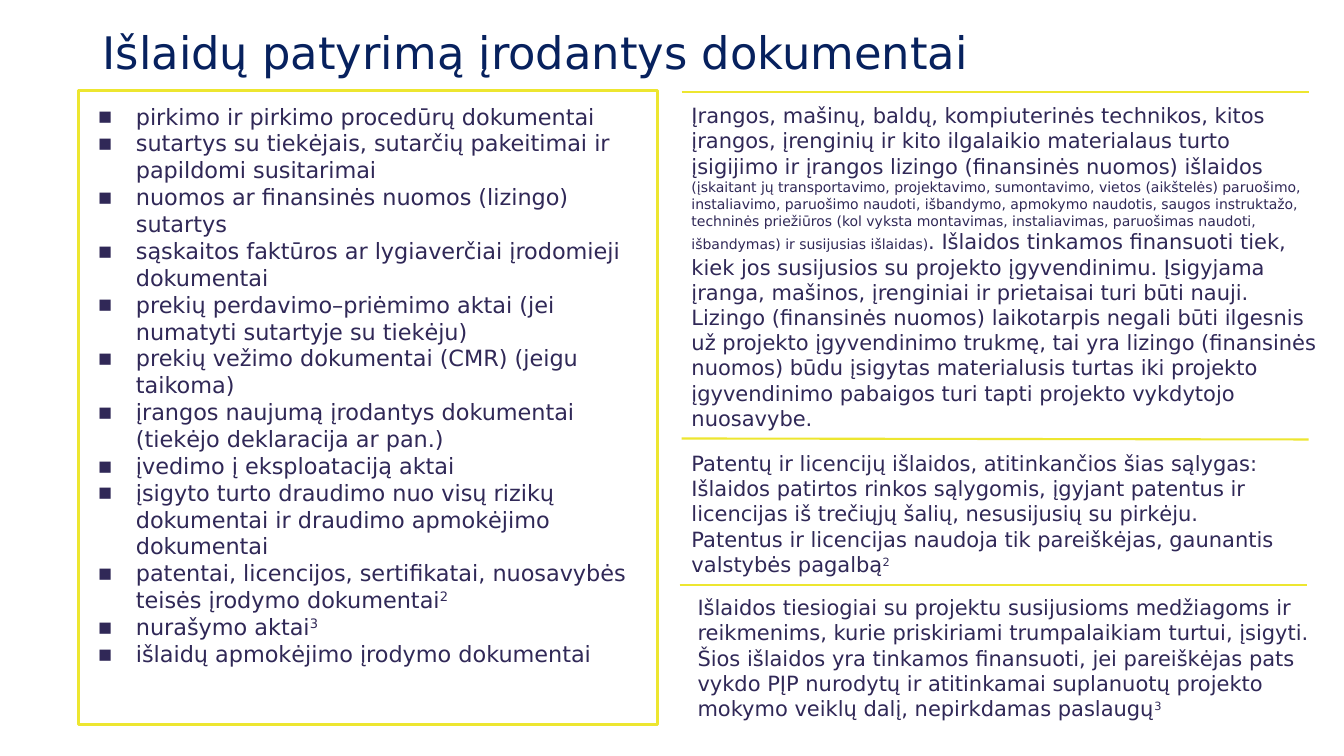
from pptx import Presentation
from pptx.dml.color import RGBColor
from pptx.enum.shapes import MSO_CONNECTOR as Link, MSO_SHAPE as Form
from pptx.enum.text import MSO_AUTO_SIZE as Fit
from pptx.oxml.ns import qn
from pptx.util import Emu, Pt
from lxml.etree import SubElement as Sub

NAVY = RGBColor(0x07, 0x21, 0x5E)
INK = RGBColor(0x30, 0x28, 0x57)
YELLOW = RGBColor(0xED, 0xE6, 0x30)

PROOFS = [
    "pirkimo ir pirkimo procedūrų dokumentai",
    "sutartys su tiekėjais, sutarčių pakeitimai ir papildomi susitarimai",
    "nuomos ar finansinės nuomos (lizingo) sutartys",
    "sąskaitos faktūros ar lygiaverčiai įrodomieji dokumentai",
    "prekių perdavimo–priėmimo aktai (jei numatyti sutartyje su tiekėju)",
    "prekių vežimo dokumentai (CMR) (jeigu taikoma)",
    "įrangos naujumą įrodantys dokumentai (tiekėjo deklaracija ar pan.)",
    "įvedimo į eksploataciją aktai",
    "įsigyto turto draudimo nuo visų rizikų dokumentai ir draudimo apmokėjimo dokumentai",
    ["patentai, licencijos, sertifikatai, nuosavybės teisės įrodymo dokumentai", ("2", 16, True)],
    ["nurašymo aktai", ("3", 16, True)],
    "išlaidų apmokėjimo įrodymo dokumentai",
]
GEAR = [[
    "Įrangos, mašinų, baldų, kompiuterinės technikos, kitos įrangos, įrenginių ir kito "
    "ilgalaikio materialaus turto įsigijimo ir įrangos lizingo (finansinės nuomos) išlaidos ",
    ("(įskaitant jų transportavimo, projektavimo, sumontavimo, vietos (aikštelės) paruošimo, "
     "instaliavimo, paruošimo naudoti, išbandymo, apmokymo naudotis, saugos instruktažo, "
     "techninės priežiūros (kol vyksta montavimas, instaliavimas, paruošimas naudoti, "
     "išbandymas) ir susijusias išlaidas)", 10, False),
    ". Išlaidos tinkamos finansuoti tiek, kiek jos susijusios su projekto įgyvendinimu. "
    "Įsigyjama įranga, mašinos, įrenginiai ir prietaisai turi būti nauji. Lizingo (finansinės "
    "nuomos) laikotarpis negali būti ilgesnis už projekto įgyvendinimo trukmę, tai yra lizingo "
    "(finansinės nuomos) būdu įsigytas materialusis turtas iki projekto įgyvendinimo pabaigos "
    "turi tapti projekto vykdytojo nuosavybe.",
]]
PATENTS = [
    "Patentų ir licencijų išlaidos, atitinkančios šias sąlygas:",
    "Išlaidos patirtos rinkos sąlygomis, įgyjant patentus ir licencijas iš trečiųjų šalių, "
    "nesusijusių su pirkėju.",
    ["Patentus ir licencijas naudoja tik pareiškėjas, gaunantis valstybės pagalbą", ("2", 14, True)],
]
GOODS = [[
    "Išlaidos tiesiogiai su projektu susijusioms medžiagoms ir reikmenims, kurie priskiriami "
    "trumpalaikiam turtui, įsigyti. Šios išlaidos yra tinkamos finansuoti, jei pareiškėjas pats "
    "vykdo PĮP nurodytų ir atitinkamai suplanuotų projekto mokymo veiklų dalį, nepirkdamas "
    "paslaugų", ("3", 14, True),
]]


def px(n):
    """Turn px, a hundred to the inch, into EMU."""
    return Emu(n * 9144)


class Page:
    """Holds the font and the slide, and draws each kind of element."""

    def __init__(self, slide, face):
        self.shapes = slide.shapes
        self.face = face

    def text(self, box, paras, size, ink=INK, mark=None):
        """Add a text box; a paragraph is a string or a list of parts."""
        frame = self.shapes.add_textbox(*map(px, box)).text_frame
        frame.word_wrap = True
        frame.auto_size = Fit.SHAPE_TO_FIT_TEXT
        for i, parts in enumerate(paras):
            para = frame.add_paragraph() if i else frame.paragraphs[0]
            if mark:
                self.bullet(para, mark)
            for part in [parts] if isinstance(parts, str) else parts:
                words, pts, sup = (part, size, False) if isinstance(part, str) else part
                run = para.add_run()
                run.text = words
                font = run.font
                font.name, font.size = self.face, Pt(pts)
                font.color.rgb = ink
                if sup:
                    run._r.get_or_add_rPr().set("baseline", "30000")

    def bullet(self, para, mark):
        """Give a paragraph a hanging bullet."""
        props = para._p.get_or_add_pPr()
        props.set("marL", str(px(38)))
        props.set("indent", str(px(-38)))
        Sub(props, qn("a:buFont"), typeface=self.face)
        Sub(props, qn("a:buChar"), char=mark)

    def frame(self, box):
        """Add an unfilled square-cornered frame."""
        shape = self.shapes.add_shape(Form.ROUNDED_RECTANGLE, *map(px, box))
        shape.adjustments[0] = 0
        shape.shadow.inherit = False
        shape.fill.background()
        shape.line.color.rgb = YELLOW
        shape.line.width = Pt(2.25)

    def rule(self, x, y, width, drop=0):
        """Add a thin dividing line."""
        ends = map(px, (x, y, x + width, y + drop))
        line = self.shapes.add_connector(Link.STRAIGHT, *ends)
        line.line.color.rgb = YELLOW
        line.line.width = Pt(1.5)
        Sub(line._element.spPr, qn("a:effectLst"))


def main():
    """Build and save the slide."""
    deck = Presentation()
    deck.slide_width, deck.slide_height = px(1333), px(750)
    page = Page(deck.slides.add_slide(deck.slide_layouts[6]), "DejaVu Sans")
    page.text((92, 20, 1103, 64), ["Išlaidų patyrimą įrodantys dokumentai"], 32, NAVY)
    page.frame((78, 90, 574, 629))
    page.text((87, 97, 556, 576), PROOFS, 16, mark="▪")
    page.text((676, 97, 645, 338), GEAR, 15)
    for x, y, drop in ((676, 91, 0), (674, 580, 0), (676, 435, 1)):
        page.rule(x, y, 622, drop)
    page.text((676, 442, 645, 162), PATENTS, 15)
    page.text((682, 585, 640, 192), GOODS, 15)
    deck.save("out.pptx")


if __name__ == "__main__":
    main()
